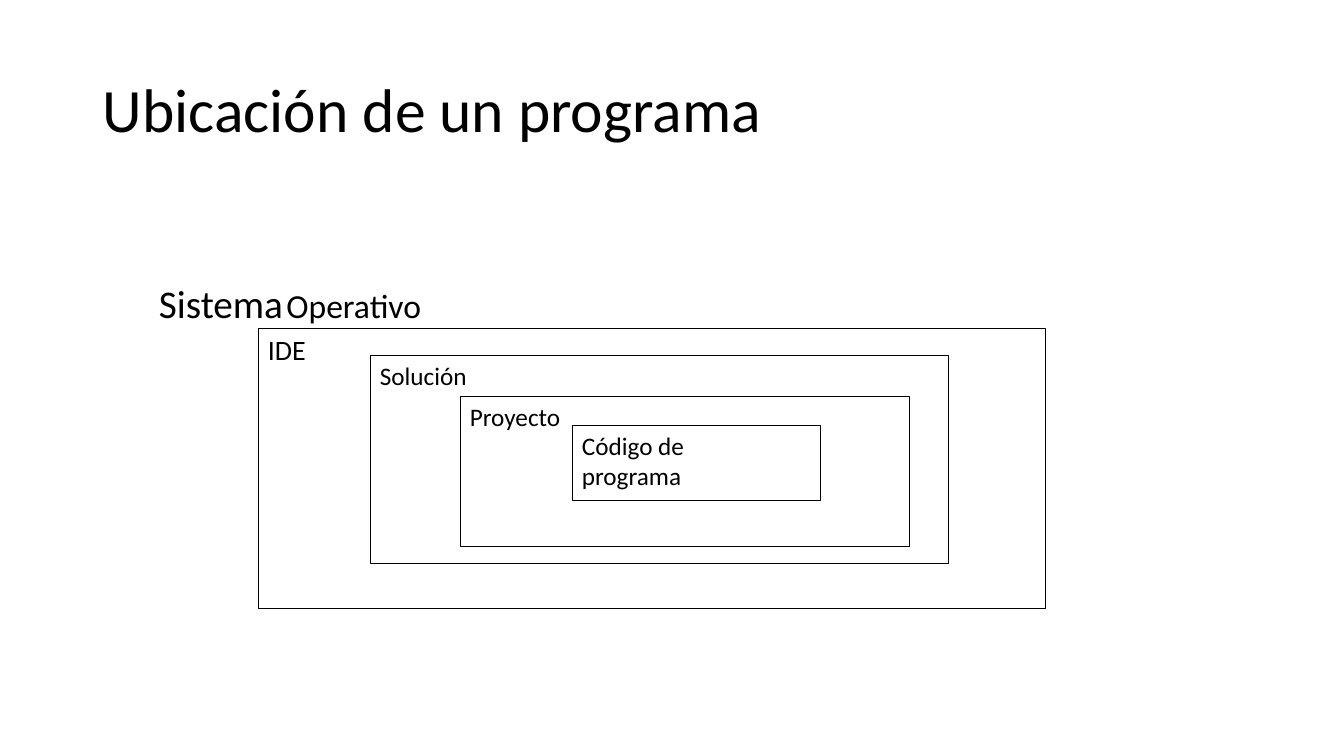
from pptx import Presentation
from pptx.dml.color import RGBColor
from pptx.enum.shapes import MSO_SHAPE
from pptx.enum.text import MSO_ANCHOR, PP_ALIGN
from pptx.util import Pt

PX = 914400 / 100.8
RECTANGLE = MSO_SHAPE.RECTANGLE
TOP, MIDDLE = MSO_ANCHOR.TOP, MSO_ANCHOR.MIDDLE
LEFT = PP_ALIGN.LEFT
FONT = "Calibri"
COLORS = {"paper": "FFFFFF", "ink": "000000"}


def px(*lengths):
    return [round(length * PX) for length in lengths]


def write_text(shape, lines, anchor):
    """Fill a shape with lines, each a list of (text, size in points) runs."""
    frame = shape.text_frame
    frame.word_wrap = True
    frame.vertical_anchor = anchor
    for index, runs in enumerate(lines):
        paragraph = frame.add_paragraph() if index else frame.paragraphs[0]
        paragraph.alignment = LEFT
        for text, size in runs:
            run = paragraph.add_run()
            run.text = text
            run.font.name = FONT
            run.font.size = Pt(size)
            run.font.color.rgb = RGBColor.from_string(COLORS["ink"])


presentation = Presentation()
presentation.slide_width, presentation.slide_height = px(1344, 756)
slide = presentation.slides.add_slide(presentation.slide_layouts[6])
slide.background.fill.solid()
slide.background.fill.fore_color.rgb = RGBColor.from_string(COLORS["paper"])

title = slide.shapes.add_textbox(*px(93, 40, 1159, 146))
write_text(title, [[("Ubicación de un programa", 44)]], MIDDLE)
title.text_frame.paragraphs[0].line_spacing = 0.9

# Nested levels from the outside in: box, line colour, line width, text
levels = [
    ((149, 274, 996, 375), "paper", 0.75,
     [[("Sistema", 28), (" ", 11), ("Operativo", 24)]]),
    ((258, 328, 787, 280), "ink", 0.5, [[("IDE", 20)]]),
    ((370, 355, 578, 208), "ink", 0.5, [[("Solución", 18)]]),
    ((460, 396, 449, 150), "ink", 0.5, [[("Proyecto", 18)]]),
    ((572, 425, 248, 75), "ink", 0.5, [[("Código de", 18)], [("programa", 18)]]),
]
for box, line_color, line_width, lines in levels:
    level = slide.shapes.add_shape(RECTANGLE, *px(*box))
    level.shadow.inherit = False
    level.fill.solid()
    level.fill.fore_color.rgb = RGBColor.from_string(COLORS["paper"])
    level.line.color.rgb = RGBColor.from_string(COLORS[line_color])
    level.line.width = Pt(line_width)
    write_text(level, lines, TOP)

presentation.save("out.pptx")
